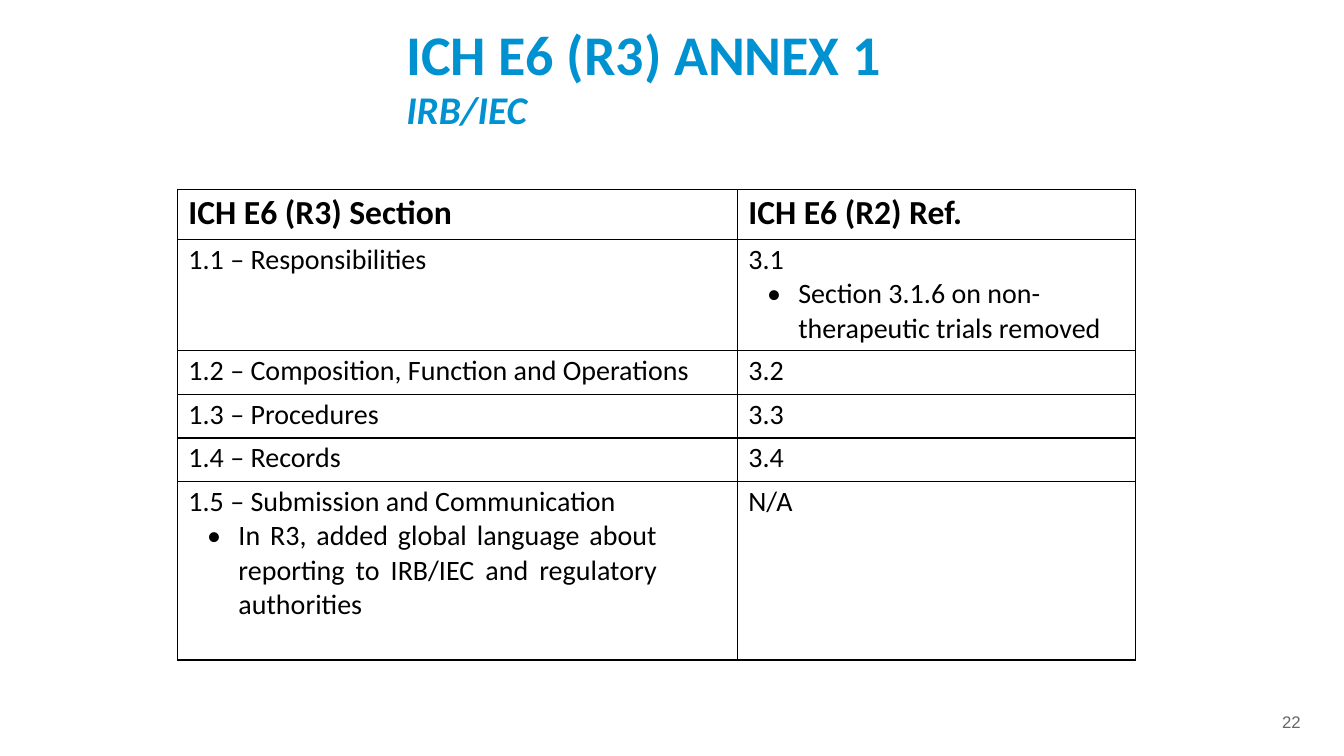
from dataclasses import dataclass

from lxml import etree
from pptx import Presentation
from pptx.dml.color import RGBColor
from pptx.enum.text import MSO_ANCHOR, MSO_AUTO_SIZE, PP_ALIGN
from pptx.oxml.ns import qn
from pptx.util import Cm, Pt

TOP = MSO_ANCHOR.TOP
NO_AUTOFIT = MSO_AUTO_SIZE.NONE
LEFT, JUSTIFY = PP_ALIGN.LEFT, PP_ALIGN.JUSTIFY

COLORS = {"title": "0092D0", "text": "000000", "border": "000000", "number": "666666"}
COLUMN_WIDTHS = (14.11, 10.03)
TEXT_INDENT = Cm(0.27)
BULLET_INDENT, BULLET_HANGING = Cm(1.53), Cm(0.79)


@dataclass
class Entry:
    text: str
    bullet: str = ""
    align: PP_ALIGN = LEFT
    right_margin: float = 0


@dataclass
class Row:
    height: float
    section: Entry
    reference: Entry
    size: int = 20
    bold: bool = False


ROWS = [
    Row(1.26, Entry("ICH E6 (R3) Section"), Entry("ICH E6 (R2) Ref."), 24, True),
    Row(2.8, Entry("1.1 – Responsibilities"),
        Entry("3.1", "Section 3.1.6 on non-therapeutic trials removed")),
    Row(1.1, Entry("1.2 – Composition, Function and Operations"), Entry("3.2")),
    Row(1.1, Entry("1.3 – Procedures"), Entry("3.3")),
    Row(1.1, Entry("1.4 – Records"), Entry("3.4")),
    Row(4.49,
        Entry("1.5 – Submission and Communication",
              "In R3, added global language about reporting to IRB/IEC "
              "and regulatory authorities", JUSTIFY, 2.03),
        Entry("N/A")),
]


def style(para, size: float, color: str, name: str = "Calibri",
          bold: bool = False, italic: bool = False) -> None:
    font = para.font
    font.name, font.size, font.bold, font.italic = name, Pt(size), bold, italic
    font.color.rgb = RGBColor.from_string(COLORS[color])


def clear_margins(frame) -> None:
    frame.margin_left = frame.margin_top = frame.margin_right = frame.margin_bottom = 0


def add_title(page) -> None:
    box = page.shapes.title
    box.left, box.top, box.width, box.height = Cm(10.24), Cm(0.51), Cm(12.19), Cm(2.9)
    frame = box.text_frame
    frame.text = "ICH E6 (R3) ANNEX 1\nIRB/IEC"
    clear_margins(frame)
    frame.word_wrap, frame.auto_size, frame.vertical_anchor = True, NO_AUTOFIT, TOP
    heading, subheading = frame.paragraphs
    for para, size, spacing in ((heading, 40, 47.2), (subheading, 28, 32.8)):
        para.alignment, para.line_spacing = LEFT, Pt(spacing)
        style(para, size, "title", bold=True, italic=para is subheading)


def add_page_number(page) -> None:
    box = page.shapes.add_textbox(Cm(32.21), Cm(17.93), Cm(0.71), Cm(0.53))
    frame = box.text_frame
    clear_margins(frame)
    frame.margin_left = Cm(0.1)
    frame.word_wrap = True
    para = frame.paragraphs[0]
    para.text, para.line_spacing = "22", Pt(14.2)
    style(para, 12, "number", "Arial")


def add_borders(cell) -> None:
    properties = cell._tc.get_or_add_tcPr()
    for index, side in enumerate(("lnL", "lnR", "lnT", "lnB")):
        line = etree.Element(qn(f"a:{side}"), w=str(Pt(1)))
        fill = etree.SubElement(line, qn("a:solidFill"))
        etree.SubElement(fill, qn("a:srgbClr"), val=COLORS["border"])
        properties.insert(index, line)


def add_bullet(para, right_margin: float) -> None:
    properties = para._p.get_or_add_pPr()
    properties.set("marL", str(BULLET_INDENT))
    properties.set("marR", str(Cm(right_margin)))
    properties.set("indent", str(-BULLET_HANGING))
    etree.SubElement(properties, qn("a:buFont"), typeface="Calibri")
    etree.SubElement(properties, qn("a:buChar"), char="•")


def fill_cell(cell, entry: Entry, row: Row) -> None:
    cell.fill.background()
    add_borders(cell)
    cell.margin_left, cell.margin_top = TEXT_INDENT, Cm(0.08)
    cell.margin_right = cell.margin_bottom = 0
    cell.vertical_anchor = TOP
    frame = cell.text_frame
    frame.text = entry.text
    if entry.bullet:
        para = frame.add_paragraph()
        para.text = entry.bullet
        add_bullet(para, entry.right_margin)
        para._p.pPr.set("marL", str(BULLET_INDENT - TEXT_INDENT))
    for para in frame.paragraphs:
        para.alignment = entry.align
        style(para, row.size, "text", bold=row.bold)


def add_section_table(page) -> None:
    frame = page.shapes.add_table(
        len(ROWS), len(COLUMN_WIDTHS), Cm(4.48), Cm(4.78),
        Cm(sum(COLUMN_WIDTHS)), Cm(sum(row.height for row in ROWS)))
    table = frame.table
    table.first_row = table.horz_banding = False
    for column, width in zip(table.columns, COLUMN_WIDTHS):
        column.width = Cm(width)
    for table_row, row in zip(table.rows, ROWS):
        table_row.height = Cm(row.height)
        for cell, entry in zip(table_row.cells, (row.section, row.reference)):
            fill_cell(cell, entry, row)


def main() -> None:
    deck = Presentation()
    deck.slide_width, deck.slide_height = Cm(33.87), Cm(19.05)
    page = deck.slides.add_slide(deck.slide_layouts[5])
    add_title(page)
    add_page_number(page)
    add_section_table(page)
    deck.save("out.pptx")


if __name__ == "__main__":
    main()
